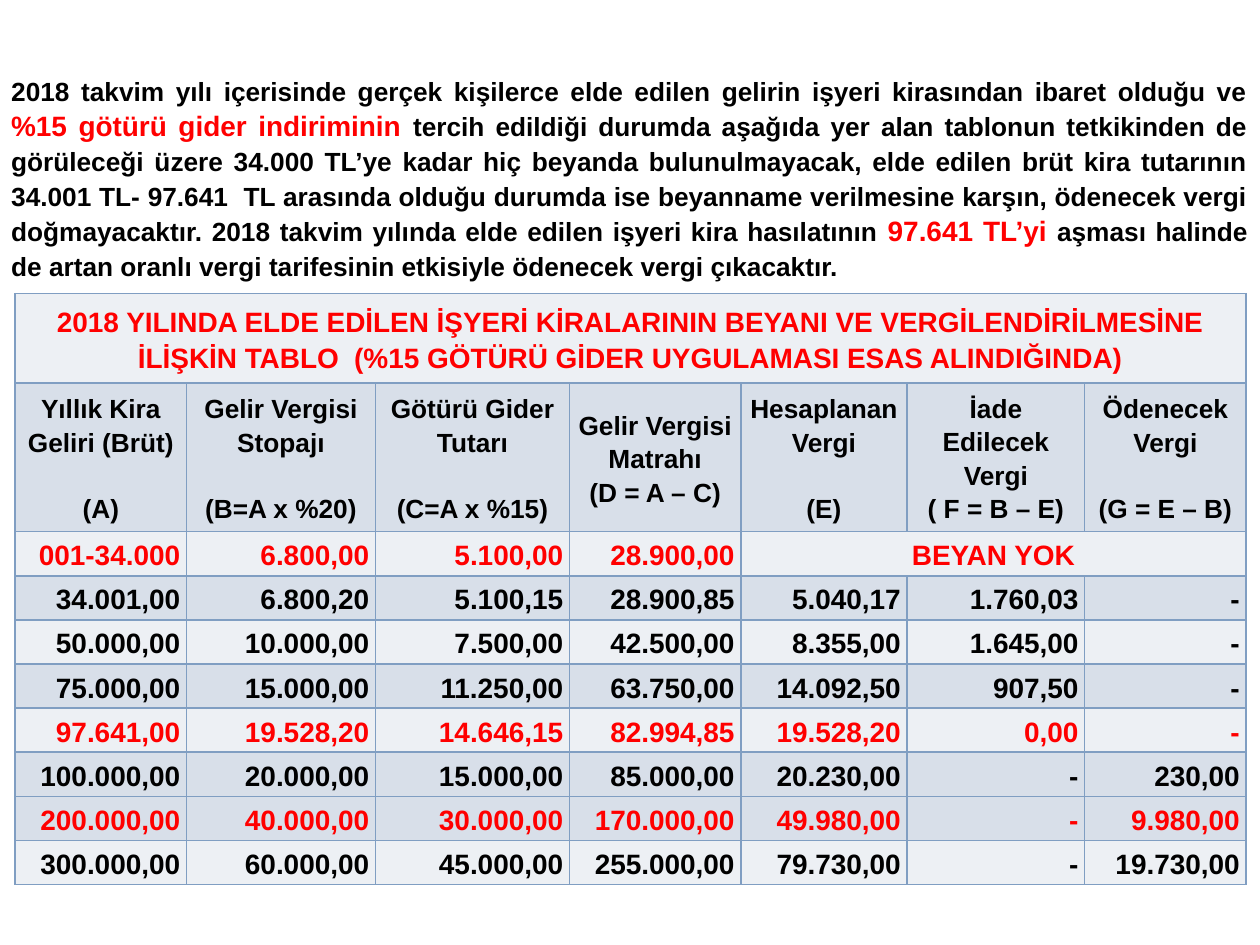
from lxml.etree import SubElement
from pptx import Presentation
from pptx.dml.color import RGBColor
from pptx.enum.text import MSO_ANCHOR, PP_ALIGN
from pptx.oxml.ns import qn
from pptx.util import Inches, Pt

BLACK, RED = "000000", "FF0000"
LIGHT, DARK, BORDER = "EDF0F4", "D8DFE9", "809EC2"
COLUMN_WIDTHS = [1.36, 1.5, 1.54, 1.36, 1.32, 1.41, 1.28]
TITLE_HEIGHT, HEADER_HEIGHT, ROW_HEIGHT = 0.71, 1.18, 0.35

INTRO = [
    ("2018 takvim yılı içerisinde gerçek kişilerce elde edilen gelirin işyeri "
     "kirasından ibaret olduğu ve ", 15, BLACK),
    ("%15 götürü gider indiriminin ", 16, RED),
    ("tercih edildiği durumda aşağıda yer alan tablonun tetkikinden de görüleceği "
     "üzere 34.000 TL’ye kadar hiç beyanda bulunulmayacak, elde edilen brüt kira "
     "tutarının 34.001 TL- 97.641  TL arasında olduğu durumda ise beyanname "
     "verilmesine karşın, ödenecek vergi doğmayacaktır. 2018 takvim yılında elde "
     "edilen işyeri kira hasılatının ", 15, BLACK),
    ("97.641 TL’yi ", 16, RED),
    ("aşması halinde de artan oranlı vergi tarifesinin etkisiyle ödenecek vergi "
     "çıkacaktır.", 15, BLACK),
]
TITLE = ("2018 YILINDA ELDE EDİLEN İŞYERİ KİRALARININ BEYANI VE VERGİLENDİRİLMESİNE "
         "İLİŞKİN TABLO  (%15 GÖTÜRÜ GİDER UYGULAMASI ESAS ALINDIĞINDA)")
# Heading, formula, gap between them in points
HEADERS = [
    ("Yıllık Kira Geliri (Brüt)", "(A)", 19),
    ("Gelir Vergisi Stopajı", "(B=A x %20)", 19),
    ("Götürü Gider Tutarı", "(C=A x %15)", 19),
    ("Gelir Vergisi Matrahı", "(D = A – C)", 0),
    ("Hesaplanan Vergi", "(E)", 19),
    ("İade Edilecek Vergi", "( F = B – E)", 0),
    ("Ödenecek Vergi", "(G = E – B)", 19),
]
# Text colour, fill, values
ROWS = [
    (RED, LIGHT, "001-34.000 6.800,00 5.100,00 28.900,00"),
    (BLACK, DARK, "34.001,00 6.800,20 5.100,15 28.900,85 5.040,17 1.760,03 -"),
    (BLACK, LIGHT, "50.000,00 10.000,00 7.500,00 42.500,00 8.355,00 1.645,00 -"),
    (BLACK, DARK, "75.000,00 15.000,00 11.250,00 63.750,00 14.092,50 907,50 -"),
    (RED, LIGHT, "97.641,00 19.528,20 14.646,15 82.994,85 19.528,20 0,00 -"),
    (BLACK, DARK, "100.000,00 20.000,00 15.000,00 85.000,00 20.230,00 - 230,00"),
    (RED, DARK, "200.000,00 40.000,00 30.000,00 170.000,00 49.980,00 - 9.980,00"),
    (BLACK, LIGHT, "300.000,00 60.000,00 45.000,00 255.000,00 79.730,00 - 19.730,00"),
]


def color(value):
    return RGBColor.from_string(value)


def style_font(font, size, ink):
    font.name, font.size, font.bold = "Arial", Pt(size), True
    font.color.rgb = color(ink)


def add_intro(page, left, top, width, height):
    box = page.shapes.add_textbox(*map(Inches, (left, top, width, height)))
    box.text_frame.word_wrap = True
    para = box.text_frame.paragraphs[0]
    para.alignment, para.line_spacing = PP_ALIGN.JUSTIFY, Pt(20)
    for text, size, ink in INTRO:
        span = para.add_run()
        span.text = text
        style_font(span.font, size, ink)


def format_cell(cell, fill):
    # Borders must come before the fill in the cell's properties
    properties = cell._tc.get_or_add_tcPr()
    for side in ("a:lnL", "a:lnR", "a:lnT", "a:lnB"):
        line = SubElement(properties, qn(side), w=str(Pt(1)))
        SubElement(SubElement(line, qn("a:solidFill")), qn("a:srgbClr"), val=BORDER)
    cell.fill.solid()
    cell.fill.fore_color.rgb = color(fill)
    cell.margin_left = cell.margin_right = Inches(0.05)
    cell.margin_top = cell.margin_bottom = 0
    cell.vertical_anchor = MSO_ANCHOR.MIDDLE


def write_cell(cell, lines, size, ink, alignment, gap=0):
    cell.text_frame.text = "\n".join(lines)
    for para in cell.text_frame.paragraphs:
        para.alignment, para.line_spacing = alignment, 1.15
        style_font(para.font, size, ink)
    if gap:
        cell.text_frame.paragraphs[-1].space_before = Pt(gap)


def add_tax_table(page, left, top):
    heights = [TITLE_HEIGHT, HEADER_HEIGHT] + [ROW_HEIGHT] * len(ROWS)
    box = map(Inches, (left, top, sum(COLUMN_WIDTHS), sum(heights)))
    table = page.shapes.add_table(len(heights), len(COLUMN_WIDTHS), *box).table
    for column, width in zip(table.columns, COLUMN_WIDTHS):
        column.width = Inches(width)
    fills = [LIGHT, DARK] + [fill for _, fill, _ in ROWS]
    for row, height, fill in zip(table.rows, heights, fills):
        row.height = Inches(height)
        for cell in row.cells:
            format_cell(cell, fill)

    # Title and column headings
    last = len(COLUMN_WIDTHS) - 1
    table.cell(0, 0).merge(table.cell(0, last))
    write_cell(table.cell(0, 0), [TITLE], 16, RED, PP_ALIGN.CENTER)
    for index, (heading, formula, gap) in enumerate(HEADERS):
        write_cell(table.cell(1, index), [heading, formula], 15, BLACK,
                   PP_ALIGN.CENTER, gap)

    # Amounts
    for row_index, (ink, _, values) in enumerate(ROWS, start=2):
        for index, value in enumerate(values.split()):
            write_cell(table.cell(row_index, index), [value], 16, ink, PP_ALIGN.RIGHT)
    table.cell(2, 4).merge(table.cell(2, last))
    write_cell(table.cell(2, 4), ["BEYAN YOK"], 16, RED, PP_ALIGN.CENTER)


def main():
    deck = Presentation()
    deck.slide_width, deck.slide_height = Inches(10), Inches(7.5)
    page = deck.slides.add_slide(deck.slide_layouts[6])
    add_tax_table(page, 0.12, 2.33)
    add_intro(page, -0.01, 0.52, 10.01, 1.78)
    deck.save("out.pptx")


if __name__ == "__main__":
    main()
